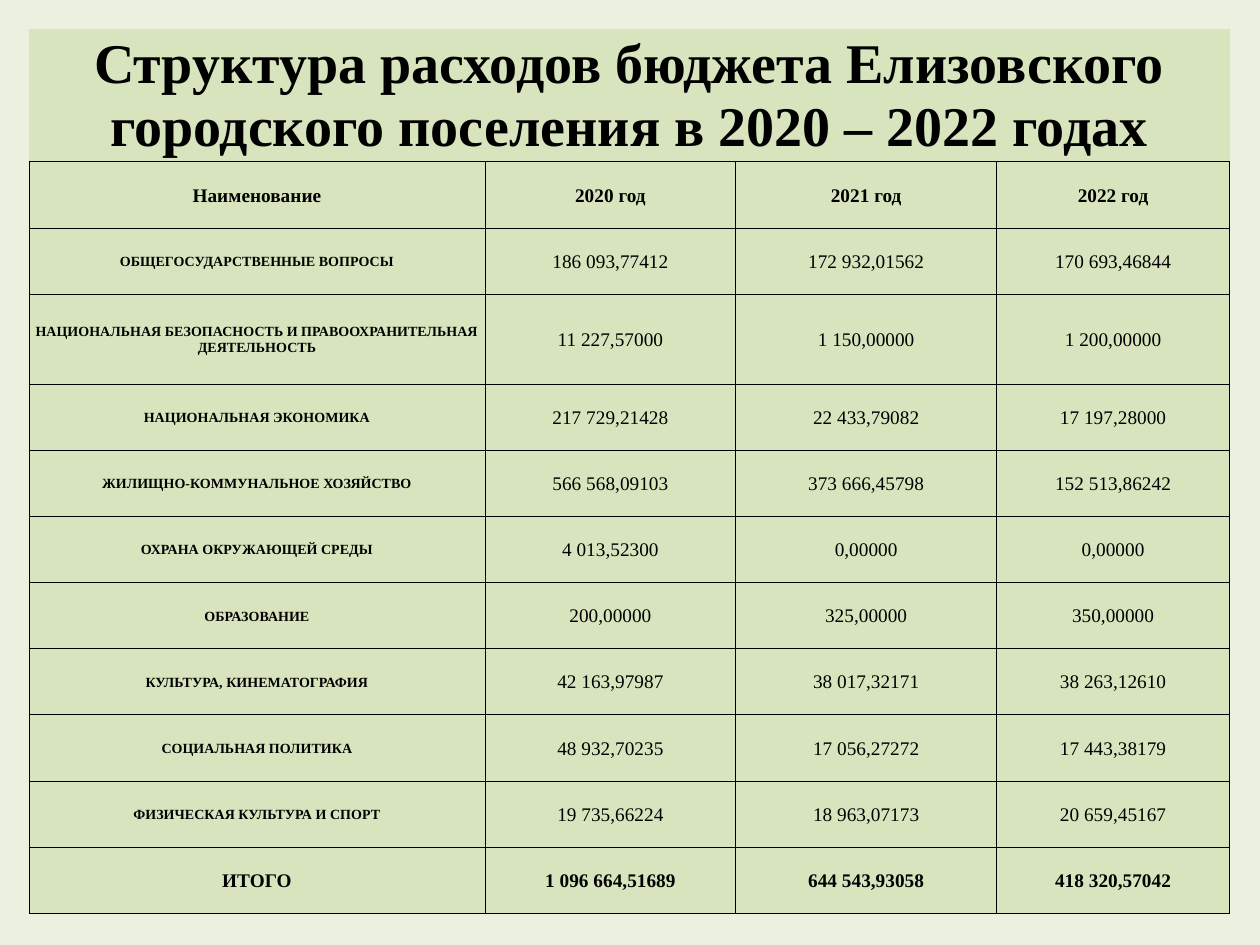
from lxml.etree import SubElement
from pptx import Presentation
from pptx.dml.color import RGBColor
from pptx.enum.text import MSO_ANCHOR, PP_ALIGN
from pptx.oxml.ns import qn
from pptx.util import Pt

PX = 4572
BACKGROUND = RGBColor(0xEB, 0xF1, 0xDE)
CELL_FILL = RGBColor(0xD7, 0xE4, 0xBD)
BLACK = RGBColor(0, 0, 0)
FONT = "Times New Roman"

TITLE = "Структура расходов бюджета Елизовского городского поселения в 2020 – 2022 годах"
ROWS = [
    (TITLE, "", "", ""),
    ("Наименование", "2020 год", "2021 год", "2022 год"),
    ("ОБЩЕГОСУДАРСТВЕННЫЕ ВОПРОСЫ", "186 093,77412", "172 932,01562", "170 693,46844"),
    ("НАЦИОНАЛЬНАЯ БЕЗОПАСНОСТЬ И ПРАВООХРАНИТЕЛЬНАЯ ДЕЯТЕЛЬНОСТЬ",
     "11 227,57000", "1 150,00000", "1 200,00000"),
    ("НАЦИОНАЛЬНАЯ ЭКОНОМИКА", "217 729,21428", "22 433,79082", "17 197,28000"),
    ("ЖИЛИЩНО-КОММУНАЛЬНОЕ ХОЗЯЙСТВО", "566 568,09103", "373 666,45798", "152 513,86242"),
    ("ОХРАНА ОКРУЖАЮЩЕЙ СРЕДЫ", "4 013,52300", "0,00000", "0,00000"),
    ("ОБРАЗОВАНИЕ", "200,00000", "325,00000", "350,00000"),
    ("КУЛЬТУРА, КИНЕМАТОГРАФИЯ", "42 163,97987", "38 017,32171", "38 263,12610"),
    ("СОЦИАЛЬНАЯ ПОЛИТИКА", "48 932,70235", "17 056,27272", "17 443,38179"),
    ("ФИЗИЧЕСКАЯ КУЛЬТУРА И СПОРТ", "19 735,66224", "18 963,07173", "20 659,45167"),
    ("ИТОГО", "1 096 664,51689", "644 543,93058", "418 320,57042"),
]
COLUMN_WIDTHS = [724, 398, 414, 370]
ROW_HEIGHTS = [211, 105, 105, 143] + [105] * 8
LAST_ROW = len(ROWS) - 1


def add_borders(cell, visible_sides):
    properties = cell._tc.get_or_add_tcPr()
    for side in "LRTB":
        line = SubElement(properties, qn(f"a:ln{side}"), w=str(Pt(0.5)))
        if side in visible_sides:
            fill = SubElement(line, qn("a:solidFill"))
            SubElement(fill, qn("a:srgbClr"), val=str(BLACK))
        else:
            SubElement(line, qn("a:noFill"))


presentation = Presentation()
presentation.slide_width = 2000 * PX
presentation.slide_height = 1500 * PX
slide = presentation.slides.add_slide(presentation.slide_layouts[6])
slide.background.fill.solid()
slide.background.fill.fore_color.rgb = BACKGROUND

table = slide.shapes.add_table(
    len(ROWS), len(COLUMN_WIDTHS), 46 * PX, 46 * PX,
    sum(COLUMN_WIDTHS) * PX, sum(ROW_HEIGHTS) * PX).table
table.first_row = False
table.horz_banding = False
for column, width in zip(table.columns, COLUMN_WIDTHS):
    column.width = width * PX
for row, height in zip(table.rows, ROW_HEIGHTS):
    row.height = height * PX
table.cell(0, 0).merge(table.cell(0, 3))

for row_index, values in enumerate(ROWS):
    for column_index, value in enumerate(values):
        cell = table.cell(row_index, column_index)
        add_borders(cell, "B" if row_index == 0 else "LRTB")
        cell.fill.solid()
        cell.fill.fore_color.rgb = CELL_FILL
        cell.vertical_anchor = MSO_ANCHOR.MIDDLE
        cell.margin_left = cell.margin_right = cell.margin_top = 2 * PX
        cell.margin_bottom = 0
        if not value:
            continue
        is_item = 1 < row_index < LAST_ROW
        cell.text_frame.text = value
        paragraph = cell.text_frame.paragraphs[0]
        paragraph.alignment = PP_ALIGN.CENTER
        font = paragraph.runs[0].font
        font.name = FONT
        font.color.rgb = BLACK
        font.bold = column_index == 0 or not is_item
        if row_index == 0:
            font.size = Pt(32)
        else:
            font.size = Pt(8 if is_item and column_index == 0 else 11)

presentation.save("out.pptx")
